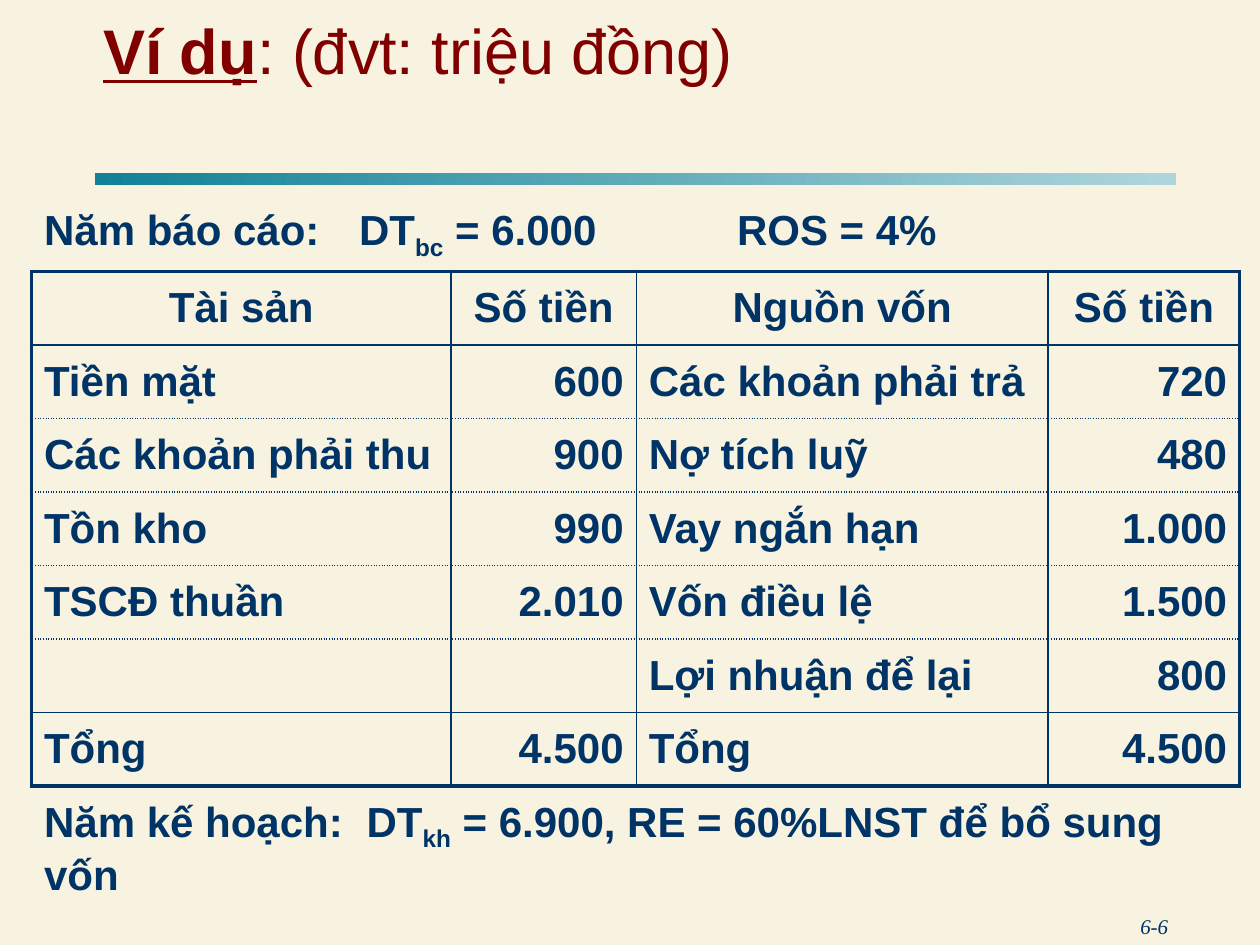
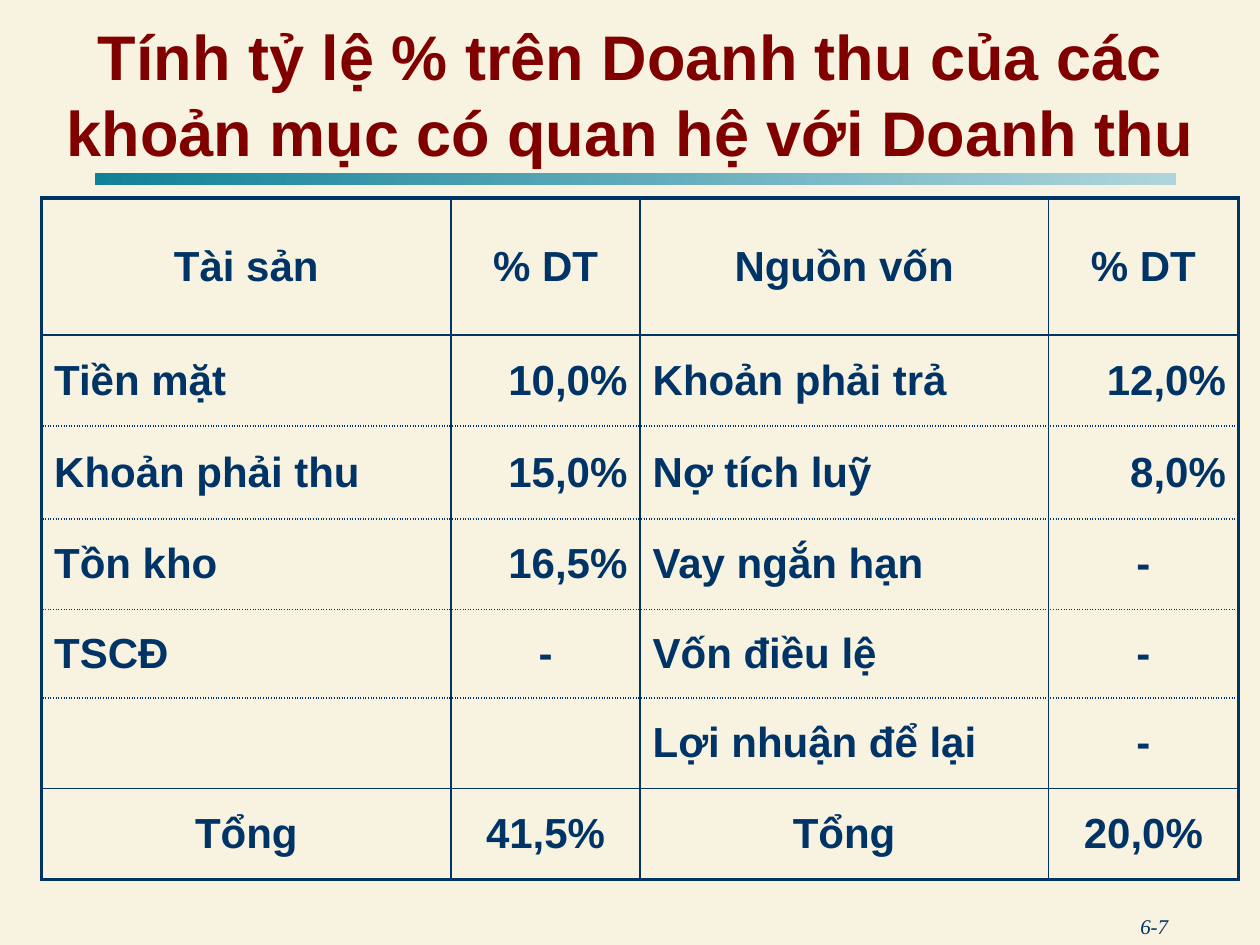
from lxml import etree
from pptx import Presentation
from pptx.dml.color import RGBColor
from pptx.enum.shapes import MSO_SHAPE
from pptx.enum.text import MSO_ANCHOR, PP_ALIGN
from pptx.oxml.ns import qn
from pptx.util import Inches, Pt

COLORS = {
    "background": "F8F3E0",
    "title": "800000",
    "text": "003366",
    "band_start": "118196",
    "band_end": "AFD5DC",
}
FORMATS = {
    "title": {"name": "Arial", "size": Pt(36), "bold": True, "color": "title"},
    "cell": {"name": "Arial", "size": Pt(24), "bold": True, "color": "text"},
    "footer": {"name": "Times New Roman", "size": Pt(12), "italic": True, "color": "text"},
}
LEFT, CENTER, RIGHT = PP_ALIGN.LEFT, PP_ALIGN.CENTER, PP_ALIGN.RIGHT
THICK, THIN, DOTTED = (2.25, "solid"), (1, "solid"), (1, "sysDot")

# Grid cells spell each toned vowel as the vowel plus a combining tone mark
VOWELS = "aăâeêioôơuưy"
TONED = {
    0x300: "àằầèềìòồờùừỳ",
    0x301: "áắấéếíóốớúứý",
    0x303: "ãẵẫẽễĩõỗỡũữỹ",
    0x309: "ảẳẩẻểỉỏổởủửỷ",
    0x323: "ạặậẹệịọộợụựỵ",
}
TONE_MARKS = str.maketrans({
    toned: vowel + chr(mark)
    for mark, letters in TONED.items()
    for vowel, toned in zip(VOWELS, letters)
})


def rgb(name):
    return RGBColor.from_string(COLORS[name])


class Deck:
    """Holds the shared style and the current slide."""

    def __init__(self):
        self.prs = Presentation()
        self.prs.slide_width, self.prs.slide_height = Inches(10), Inches(7.5)
        self.s = None

    def slide(self, number):
        self.s = self.prs.slides.add_slide(self.prs.slide_layouts[6])
        fill = self.s.background.fill
        fill.solid()
        fill.fore_color.rgb = rgb("background")
        self.text((7.7, 7.2, 1.67, 0.3), [(number, {})], "footer", RIGHT)
        self.band()

    def band(self):
        sp = self.s.shapes.add_shape(
            MSO_SHAPE.RECTANGLE, *map(Inches, (0.75, 1.37, 8.58, 0.1)))
        sp.shadow.inherit = False
        sp.line.fill.background()
        sp.fill.gradient()
        sp.fill.gradient_angle = 0
        for stop, name in zip(sp.fill.gradient_stops, ("band_start", "band_end")):
            stop.color.rgb = rgb(name)

    def runs(self, p, parts, style, align):
        p.alignment = align
        for text, changes in parts:
            r = p.add_run()
            r.text = text
            for key, value in {**FORMATS[style], **changes}.items():
                if key == "color":
                    r.font.color.rgb = rgb(value)
                elif key == "baseline":
                    r._r.get_or_add_rPr().set("baseline", str(value))
                else:
                    setattr(r.font, key, value)

    def text(self, box, parts, style, align=LEFT, anchor=MSO_ANCHOR.TOP):
        tf = self.s.shapes.add_textbox(*map(Inches, box)).text_frame
        tf.word_wrap = True
        tf.vertical_anchor = anchor
        self.runs(tf.paragraphs[0], parts, style, align)

    def title(self, box, parts, align=LEFT):
        self.text(box, parts, "title", align, MSO_ANCHOR.BOTTOM)

    def tabs(self, p, stops):
        tab_list = etree.SubElement(p._p.get_or_add_pPr(), qn("a:tabLst"))
        for stop in stops:
            etree.SubElement(tab_list, qn("a:tab"), pos=str(Inches(stop)), algn="l")

    def borders(self, cell, edges):
        tc_pr = cell._tc.get_or_add_tcPr()
        for side, line in zip("LRTB", edges):
            ln = etree.SubElement(tc_pr, qn(f"a:ln{side}"))
            if line is None:
                etree.SubElement(ln, qn("a:noFill"))
                continue
            width, dash = line
            ln.set("w", str(Pt(width)))
            solid = etree.SubElement(ln, qn("a:solidFill"))
            etree.SubElement(solid, qn("a:srgbClr"), val=COLORS["text"])
            etree.SubElement(ln, qn("a:prstDash"), val=dash)

    def balance(self, at, widths, heights, rows, total_align=None, notes=None):
        """Balance sheet; notes are merged rows (parts, tab stops) above and below."""
        first = 1 if notes else 0
        last = first + len(rows) - 1
        count = len(heights)
        frame = self.s.shapes.add_table(
            count, len(widths), *map(Inches, (*at, sum(widths), sum(heights))))
        table = frame.table
        for col, width in zip(table.columns, widths):
            col.width = Inches(width)
        for row, height in zip(table.rows, heights):
            row.height = Inches(height)

        # Rules above each row, and below the last one
        across = [None] * (count + 1)
        across[first:last + 2] = [THICK, THIN] + [DOTTED] * (len(rows) - 3) + [THIN, THICK]
        down = [THICK] + [THIN] * (len(widths) - 1) + [THICK]
        for i in range(count):
            in_grid = first <= i <= last
            for j in range(len(widths)):
                cell = table.cell(i, j)
                sides = down[j:j + 2] if in_grid else [None, None]
                self.borders(cell, [*sides, across[i], across[i + 1]])
                cell.fill.background()
                cell.vertical_anchor = MSO_ANCHOR.MIDDLE
                if not in_grid:
                    continue
                value = rows[i - first][j].translate(TONE_MARKS)
                align = RIGHT if j % 2 else LEFT
                if i == first or value == "-":
                    align = CENTER
                elif i == last and total_align is not None:
                    align = total_align
                if value:
                    self.runs(cell.text_frame.paragraphs[0], [(value, {})], "cell", align)

        # Merged note rows
        for i, (parts, stops) in zip((0, count - 1), notes or []):
            cell = table.cell(i, 0)
            cell.merge(table.cell(i, len(widths) - 1))
            p = cell.text_frame.paragraphs[0]
            self.runs(p, parts, "cell", LEFT)
            self.tabs(p, stops)


def main():
    deck = Deck()
    subscript = {"baseline": -25000}

    # Slide 1: example balance sheet
    deck.slide("6-6")
    deck.title((0.72, 0.03, 8.58, 0.71), [
        ("Ví dụ", {"underline": True}),
        (": (đvt: triệu đồng)", {"bold": False}),
    ])
    report_year = [("Năm báo cáo:\tDT", {}), ("bc", subscript),
                   (" = 6.000\tROS = 4%", {})]
    plan_year = [("Năm kế hoạch:\tDT", {}), ("kh", subscript),
                 (" = 6.900, RE = 60%LNST để bổ sung vốn", {})]
    note_height = 1.01
    row_height = (5.68 - note_height) / 8
    deck.balance(
        (0.25, 1.57), (3.33, 1.47, 3.27, 1.52), [row_height] * 8 + [note_height],
        [
            ("Tài sản", "Số tiền", "Nguồn vốn", "Số tiền"),
            ("Tiền mặt", "600", "Các khoản phải trả", "720"),
            ("Các khoản phải thu", "900", "Nợ tích luỹ", "480"),
            ("Tồn kho", "990", "Vay ngắn hạn", "1.000"),
            ("TSCĐ thuần", "2.010", "Vốn điều lệ", "1.500"),
            ("", "", "Lợi nhuận để lại", "800"),
            ("Tổng", "4.500", "Tổng", "4.500"),
        ],
        notes=[(report_year, (2.5, 5.5)), (plan_year, (2.56,))],
    )

    # Slide 2: items as a share of revenue
    deck.slide("6-7")
    deck.title((0, 0.08, 10, 1.31), [
        ("Tính tỷ lệ % trên Doanh thu của các khoản mục có quan hệ với Doanh thu", {}),
    ], CENTER)
    deck.balance(
        (0.33, 1.57), (3.25, 1.5, 3.24, 1.51), (1.09, 0.72, 0.74, 0.72, 0.7, 0.72, 0.72),
        [
            ("Tài sản", "% DT", "Nguồn vốn", "% DT"),
            ("Tiền mặt", "10,0%", "Khoản phải trả", "12,0%"),
            ("Khoản phải thu", "15,0%", "Nợ tích luỹ", "8,0%"),
            ("Tồn kho", "16,5%", "Vay ngắn hạn", "-"),
            ("TSCĐ", "-", "Vốn điều lệ", "-"),
            ("", "", "Lợi nhuận để lại", "-"),
            ("Tổng", "41,5%", "Tổng", "20,0%"),
        ],
        total_align=CENTER,
    )

    deck.prs.save("out.pptx")


if __name__ == "__main__":
    main()
